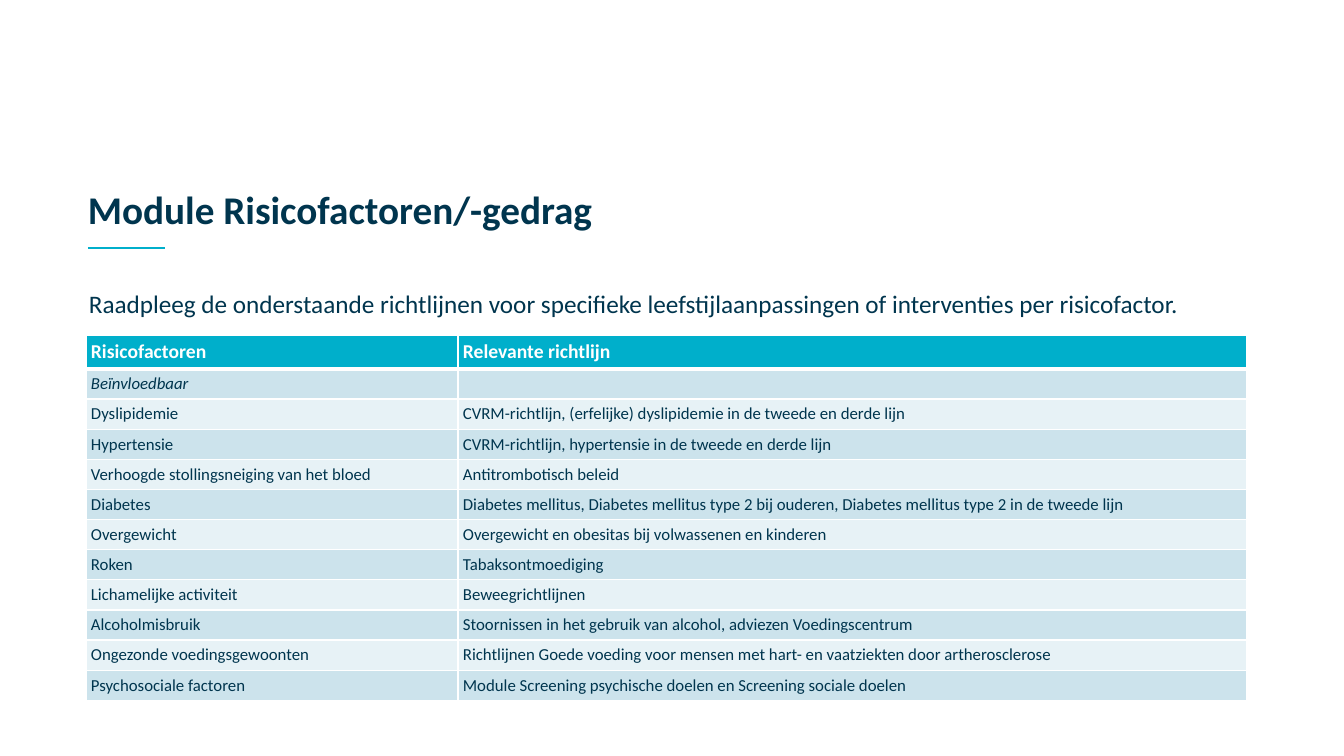
import pptx
import pptx.dml.color
import pptx.enum.shapes
import pptx.enum.text
import pptx.oxml.ns
import pptx.util
from lxml import etree

PX = 914400 / 100.8
NAVY, CYAN, WHITE = "00354E", "00AFCB", "FFFFFF"
BANDS = ("CCE3EC", "E7F2F6")
COLUMN_WIDTHS = (372, 789)
HEADER_HEIGHT, ROW_HEIGHT = 34, 30

GUIDELINES = [
    ("Risicofactoren", "Relevante richtlijn"),
    ("Beïnvloedbaar", ""),
    ("Dyslipidemie", "CVRM-richtlijn, (erfelijke) dyslipidemie in de tweede en derde lijn"),
    ("Hypertensie", "CVRM-richtlijn, hypertensie in de tweede en derde lijn"),
    ("Verhoogde stollingsneiging van het bloed", "Antitrombotisch beleid"),
    ("Diabetes", "Diabetes mellitus, Diabetes mellitus type 2 bij ouderen, "
                 "Diabetes mellitus type 2 in de tweede lijn"),
    ("Overgewicht", "Overgewicht en obesitas bij volwassenen en kinderen"),
    ("Roken", "Tabaksontmoediging"),
    ("Lichamelijke activiteit", "Beweegrichtlijnen"),
    ("Alcoholmisbruik", "Stoornissen in het gebruik van alcohol, adviezen Voedingscentrum"),
    ("Ongezonde voedingsgewoonten",
     "Richtlijnen Goede voeding voor mensen met hart- en vaatziekten door artherosclerose"),
    ("Psychosociale factoren", "Module Screening psychische doelen en Screening sociale doelen"),
]


def px(length):
    return pptx.util.Emu(round(length * PX))


def color(value):
    return pptx.dml.color.RGBColor.from_string(value)


def add_xml(parent, tag, **attributes):
    return etree.SubElement(parent, pptx.oxml.ns.qn(tag), attributes)


def write_text(frame, text, size=12, fill=NAVY, bold=False, italic=False, spacing=None):
    para = frame.paragraphs[0]
    if spacing:
        para.line_spacing = spacing
    if not text:
        # The end mark sets the line height of an empty cell
        add_xml(para._p, "a:endParaRPr", sz=str(size * 100))
        return
    span = para.add_run()
    span.text = text
    font = span.font
    font.name, font.size = "Calibri", pptx.util.Pt(size)
    font.bold, font.italic = bold, italic
    font.color.rgb = color(fill)


def add_text(page, text, left, top, width, height, anchor="TOP", **style):
    box = page.shapes.add_textbox(px(left), px(top), px(width), px(height))
    frame = box.text_frame
    frame.word_wrap = True
    frame.vertical_anchor = getattr(pptx.enum.text.MSO_ANCHOR, anchor)
    write_text(frame, text, **style)


def add_rule(page, left, right, y):
    rule = page.shapes.add_connector(
        pptx.enum.shapes.MSO_CONNECTOR.STRAIGHT, px(left), px(y), px(right), px(y))
    rule.line.color.rgb = color(CYAN)
    rule.line.width = pptx.util.Pt(1.5)
    add_xml(rule._element.spPr, "a:effectLst")


def add_borders(cell, top=1, bottom=1):
    properties = cell._tc.get_or_add_tcPr()
    for side, width in (("L", 1), ("R", 1), ("T", top), ("B", bottom)):
        border = add_xml(properties, f"a:ln{side}", w=str(pptx.util.Pt(width)))
        add_xml(add_xml(border, "a:solidFill"), "a:srgbClr", val=WHITE)


def add_guideline_table(page, left, top):
    height = HEADER_HEIGHT + ROW_HEIGHT * (len(GUIDELINES) - 1)
    table = page.shapes.add_table(
        len(GUIDELINES), len(COLUMN_WIDTHS),
        px(left), px(top), px(sum(COLUMN_WIDTHS)), px(height)).table
    for column, width in zip(table.columns, COLUMN_WIDTHS):
        column.width = px(width)
    for r, texts in enumerate(GUIDELINES):
        header = r == 0
        table.rows[r].height = px(HEADER_HEIGHT if header else ROW_HEIGHT)
        for c, text in enumerate(texts):
            cell = table.cell(r, c)
            cell.margin_left = cell.margin_right = px(5)
            cell.margin_top = cell.margin_bottom = px(5)
            add_borders(cell, top=3 if r == 1 else 1, bottom=3 if header else 1)
            cell.fill.solid()
            cell.fill.fore_color.rgb = color(CYAN if header else BANDS[(r - 1) % 2])
            write_text(cell.text_frame, text, size=14 if header else 12,
                       fill=WHITE if header else NAVY, bold=header, italic=r == 1)


def main():
    deck = pptx.Presentation()
    deck.slide_width, deck.slide_height = px(1344), px(756)
    page = deck.slides.add_slide(deck.slide_layouts[6])

    # Heading
    add_rule(page, 88, 165, 248)
    add_text(page, "Module Risicofactoren/-gedrag", 78, 134, 1189, 104,
             anchor="BOTTOM", size=28, bold=True, spacing=0.9)

    # Introduction
    add_text(page, "Raadpleeg de onderstaande richtlijnen voor specifieke "
                   "leefstijlaanpassingen of interventies per risicofactor.",
             79, 268, 1198, 387, size=18, spacing=1.5)

    # Guidelines per risk factor
    add_guideline_table(page, 86, 335)

    deck.save("out.pptx")


if __name__ == "__main__":
    main()
